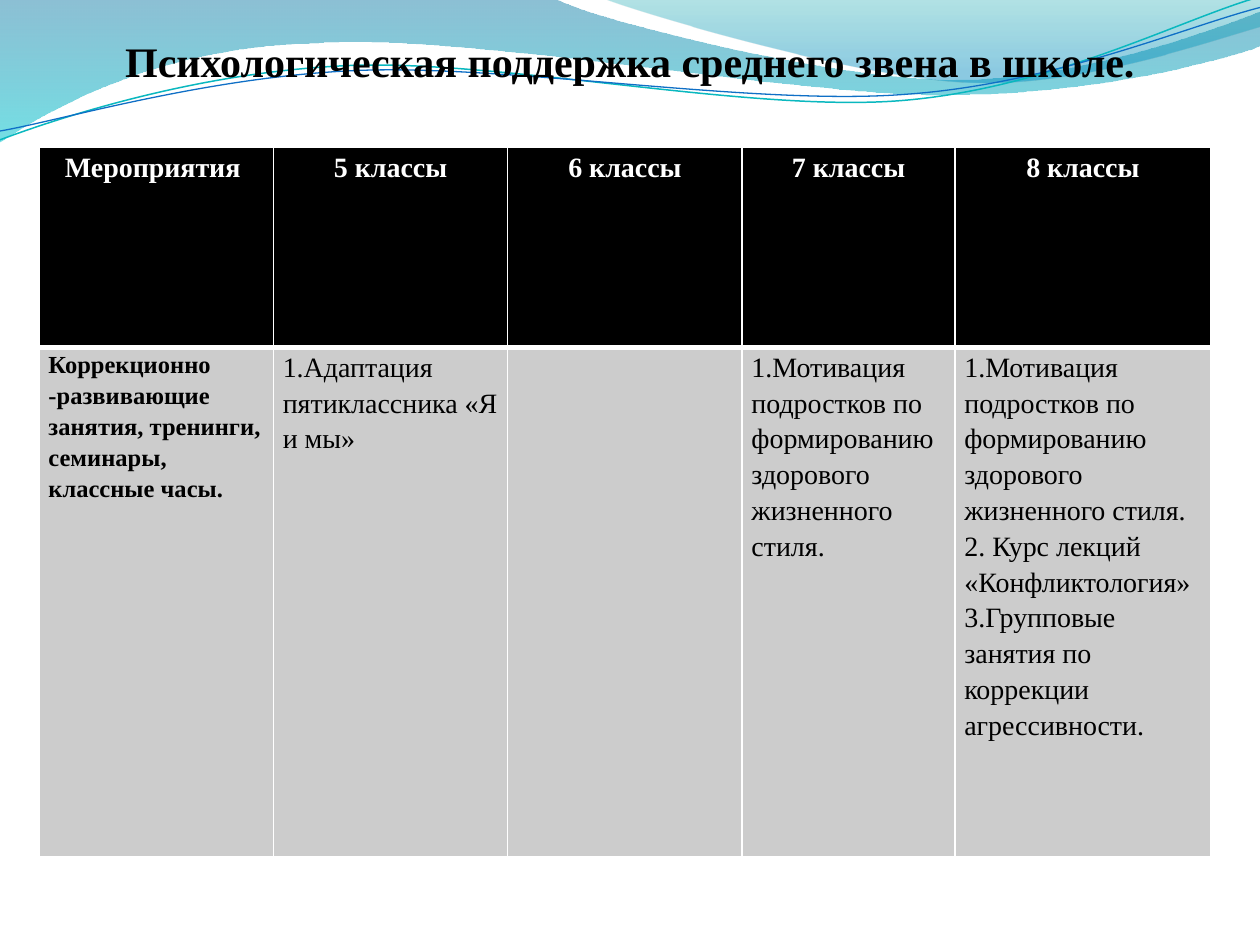
from dataclasses import dataclass
from math import cos, radians, sin
from typing import NamedTuple

from lxml.etree import SubElement
from pptx import Presentation
from pptx.dml.color import RGBColor
from pptx.enum.text import PP_ALIGN
from pptx.oxml.ns import qn
from pptx.util import Inches, Pt


@dataclass(frozen=True)
class Theme:
    font: str = "Times New Roman"
    title_size: int = 24
    cell_size: int = 16
    label_size: int = 14
    black: str = "000000"
    white: str = "FFFFFF"
    body_fill: str = "CCCCCC"
    rule: float = 1
    header_rule: float = 3


class Stop(NamedTuple):
    position: float
    color: str
    opacity: int  # percent


class Wave(NamedTuple):
    """Start point, then segments of 1 point (straight) or 3 points (Bezier)."""
    start: tuple
    segments: list
    stops: tuple = ()
    line: str = ""
    width: float = 0
    center: tuple = (0, 0)
    rotation: float = 0


THEME = Theme()
TILT = 357.3

WAVES = [
    Wave((0, 0), [
        [(4.4, -0.01)],
        [(4.76, 0.17), (6.64, 0.63), (7.58, 0.63)],
        [(8.53, 0.63), (9.58, 0.26), (10, 0.09)],
        [(10.01, 0.36)],
        [(9.83, 0.44), (8.7, 0.76), (7.46, 0.75)],
        [(6.22, 0.75), (3.82, 0.28), (2.57, 0.34)],
        [(1.29, 0.36), (0.46, 0.83), (-0.01, 1.13)],
        [(0, 0)],
    ], stops=(Stop(0, "0074A1", 45), Stop(1, "00C6CF", 55))),
    Wave((4.79, -0.01), [
        [(5.09, 0.11), (6.82, 0.62), (7.69, 0.65)],
        [(8.56, 0.69), (9.61, 0.32), (10, 0.21)],
        [(10, 0)],
        [(4.79, -0.01)],
    ], stops=(Stop(0, "00A1A9", 30), Stop(0.8, "008BBF", 45))),
    Wave((0, 1.11), [
        [(0.48, 0.93), (1.58, 0.57), (2.77, 0.52)],
        [(3.95, 0.47), (5.93, 0.89), (7.13, 0.8)],
        [(8.33, 0.71), (9.38, 0.15), (9.98, -0.02)],
    ], line="0AB8BF", width=0.85, center=(4.99, 0.57), rotation=TILT),
    Wave((0, 1.04), [
        [(0.47, 0.96), (1.64, 0.61), (2.83, 0.56)],
        [(4.03, 0.51), (5.97, 0.84), (7.17, 0.75)],
        [(8.36, 0.67), (9.41, 0.21), (10, 0.06)],
    ], line="0F6FC6", width=0.75, center=(5, 0.59), rotation=TILT),
]

TITLE = "Психологическая поддержка среднего звена в школе."
HEADERS = ["Мероприятия ", "5 классы", "6 классы", "7 классы", "8 классы"]
MOTIVATION = "1.Мотивация подростков по формированию здорового жизненного стиля."
ACTIVITIES = [
    ["Коррекционно -развивающие занятия, тренинги, семинары, классные часы."],
    ["1.Адаптация пятиклассника «Я и мы»"],
    [],
    [MOTIVATION],
    [MOTIVATION, "2. Курс лекций «Конфликтология»",
     "3.Групповые занятия по коррекции агрессивности."],
]
COL_WIDTHS = [1.86, 1.86, 1.86, 1.69, 2.03]
ROW_HEIGHTS = [1.59, 4.04]


def rgb(color: str) -> RGBColor:
    return RGBColor.from_string(color)


def untilted(point: tuple, wave: Wave) -> tuple:
    """The point in the wave's own frame, before its rotation is applied."""
    angle = radians(-wave.rotation)
    cx, cy = wave.center
    dx, dy = point[0] - cx, point[1] - cy
    return (Inches(cx + dx * cos(angle) - dy * sin(angle)),
            Inches(cy + dx * sin(angle) + dy * cos(angle)))


def bend(sp, segments: list) -> None:
    """Turn each run of three straight steps of a Bezier segment into one curve."""
    steps = iter(list(sp.element.spPr.iter(qn("a:lnTo"))))
    for segment in segments:
        group = [next(steps) for _ in segment]
        if len(group) == 1:
            continue
        curve = group[0].makeelement(qn("a:cubicBezTo"))
        group[0].addprevious(curve)
        for step in group:
            curve.append(step[0])
            step.getparent().remove(step)


def add_wave(s, wave: Wave) -> None:
    builder = s.shapes.build_freeform(*untilted(wave.start, wave), scale=1.0)
    builder.add_line_segments(
        [untilted(pt, wave) for segment in wave.segments for pt in segment],
        close=bool(wave.stops))
    sp = builder.convert_to_shape()
    bend(sp, wave.segments)
    sp.rotation = wave.rotation
    sp.shadow.inherit = False
    if not wave.stops:
        sp.fill.background()
        sp.line.color.rgb = rgb(wave.line)
        sp.line.width = Pt(wave.width)
        return
    sp.line.fill.background()
    sp.fill.gradient()
    sp.fill.gradient_angle = 270
    for gs, stop in zip(sp.fill.gradient_stops, wave.stops):
        gs.position = stop.position
        gs.color.rgb = rgb(stop.color)
    for clr, stop in zip(sp.element.spPr.iter(qn("a:srgbClr")), wave.stops):
        SubElement(clr, qn("a:alpha"), val=str(stop.opacity * 1000))


def add_run(p, text: str, size: float, color: str, bold: bool) -> None:
    r = p.add_run()
    r.text = text
    r.font.name = THEME.font
    r.font.size = Pt(size)
    r.font.bold = bold
    r.font.color.rgb = rgb(color)


def add_title(s) -> None:
    tf = s.shapes.add_textbox(Inches(0), Inches(0.23), Inches(10), Inches(0.5)).text_frame
    tf.word_wrap = True
    p = tf.paragraphs[0]
    p.alignment = PP_ALIGN.CENTER
    add_run(p, TITLE, THEME.title_size, THEME.black, True)


def set_borders(cell, top: float, bottom: float) -> None:
    tc_pr = cell._tc.get_or_add_tcPr()
    widths = {"a:lnL": THEME.rule, "a:lnR": THEME.rule, "a:lnT": top, "a:lnB": bottom}
    for tag, width in widths.items():
        ln = SubElement(tc_pr, qn(tag), w=str(Pt(width)))
        SubElement(SubElement(ln, qn("a:solidFill")), qn("a:srgbClr"), val=THEME.white)


def fill_cell(cell, lines: list, size: float, bold: bool, header: bool) -> None:
    cell.margin_left = cell.margin_right = Pt(5.4)
    cell.margin_top = cell.margin_bottom = Inches(0)
    if header:
        set_borders(cell, THEME.rule, THEME.header_rule)
    else:
        set_borders(cell, THEME.header_rule, THEME.rule)
    cell.fill.solid()
    cell.fill.fore_color.rgb = rgb(THEME.black if header else THEME.body_fill)
    tf = cell.text_frame
    for i, line in enumerate(lines):
        p = tf.add_paragraph() if i else tf.paragraphs[0]
        p.alignment = PP_ALIGN.CENTER if header else PP_ALIGN.LEFT
        p.line_spacing = 1.15
        add_run(p, line, size, THEME.white if header else THEME.black, bold)


def add_activity_table(s) -> None:
    table = s.shapes.add_table(
        len(ROW_HEIGHTS), len(COL_WIDTHS), Inches(0.31), Inches(1.17),
        Inches(sum(COL_WIDTHS)), Inches(sum(ROW_HEIGHTS))).table
    table.horz_banding = False
    for col, width in zip(table.columns, COL_WIDTHS):
        col.width = Inches(width)
    for row, height in zip(table.rows, ROW_HEIGHTS):
        row.height = Inches(height)
    for c, (header, lines) in enumerate(zip(HEADERS, ACTIVITIES)):
        is_label = c == 0
        fill_cell(table.cell(0, c), [header], THEME.cell_size, True, True)
        fill_cell(table.cell(1, c), lines,
                  THEME.label_size if is_label else THEME.cell_size, is_label, False)


def main() -> None:
    prs = Presentation()
    prs.slide_width, prs.slide_height = Inches(10), Inches(7.5)
    s = prs.slides.add_slide(prs.slide_layouts[6])
    for wave in WAVES:
        add_wave(s, wave)
    add_title(s)
    add_activity_table(s)
    prs.save("out.pptx")


if __name__ == "__main__":
    main()
